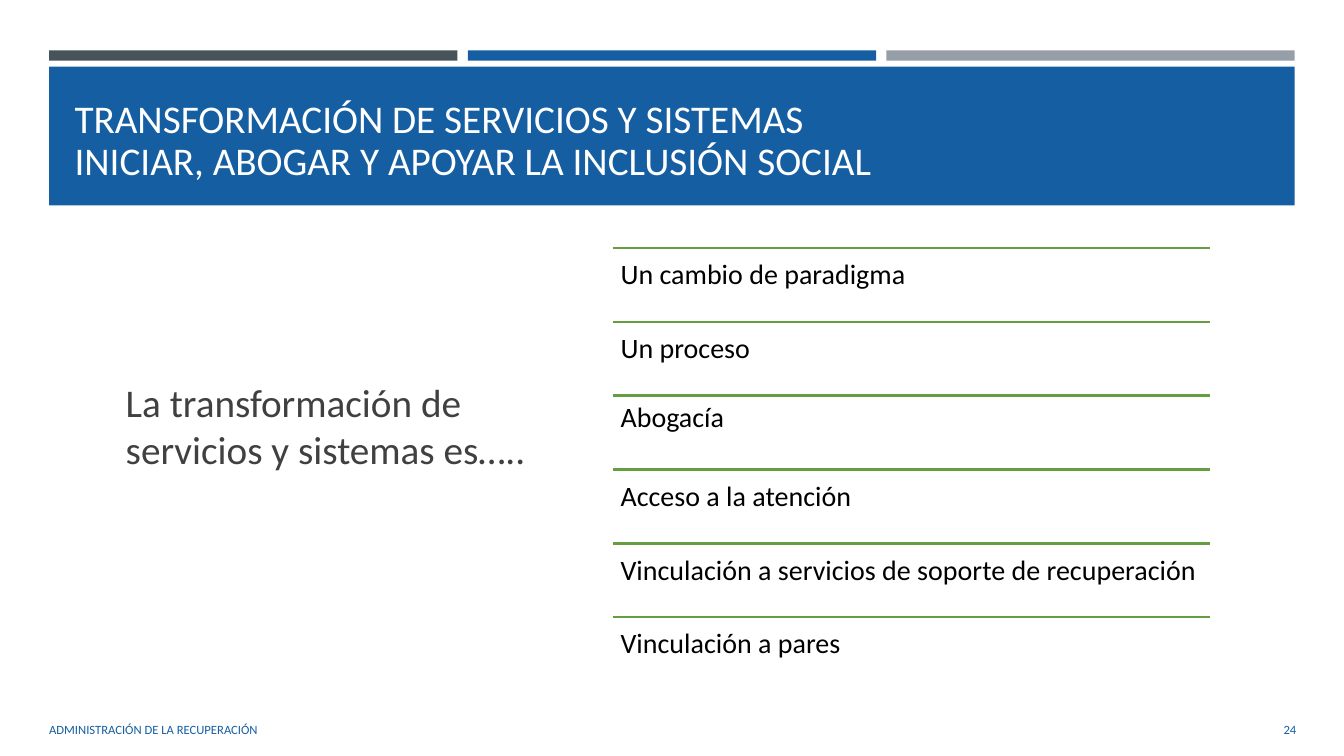
from lxml import etree
from pptx import Presentation
from pptx.dml.color import RGBColor
from pptx.enum.shapes import MSO_CONNECTOR, MSO_SHAPE
from pptx.enum.text import MSO_ANCHOR, PP_ALIGN
from pptx.oxml.ns import qn
from pptx.util import Cm, Pt

RECTANGLE = MSO_SHAPE.RECTANGLE
STRAIGHT = MSO_CONNECTOR.STRAIGHT
TOP, MIDDLE = MSO_ANCHOR.TOP, MSO_ANCHOR.MIDDLE
LEFT, RIGHT = PP_ALIGN.LEFT, PP_ALIGN.RIGHT

FONT = "Calibri"
COLORS = {
    "slate": "465359",
    "blue": "155EA1",
    "gray": "969FA7",
    "green": "649E40",
    "white": "FFFFFF",
    "body": "404040",
    "black": "000000",
}
TITLE = [
    "TRANSFORMACIÓN DE SERVICIOS Y SISTEMAS",
    "INICIAR, ABOGAR Y APOYAR LA INCLUSIÓN SOCIAL",
]
ITEMS = [
    ("Un cambio de paradigma", 0.32),
    ("Un proceso", 0.32),
    ("Abogacía", 0.2),
    ("Acceso a la atención", 0.32),
    ("Vinculación a servicios de soporte de recuperación", 0.32),
    ("Vinculación a pares", 0.32),
]


def color(name):
    return RGBColor.from_string(COLORS[name])


def add_bar(slide, left, top, width, height, fill):
    shape = slide.shapes.add_shape(RECTANGLE, Cm(left), Cm(top), Cm(width), Cm(height))
    shape.shadow.inherit = False
    shape.fill.solid()
    shape.fill.fore_color.rgb = color(fill)
    shape.line.fill.background()


def add_text(slide, box, lines, size, font_color, align=LEFT, anchor=TOP,
             spacing=1.0, side_inset=0.25, top_inset=0):
    shape = slide.shapes.add_textbox(*(Cm(length) for length in box))
    frame = shape.text_frame
    frame.word_wrap = True
    frame.vertical_anchor = anchor
    frame.margin_left = frame.margin_right = Cm(side_inset)
    frame.margin_top, frame.margin_bottom = Cm(top_inset), Cm(0)
    frame.text = "\n".join(lines)
    for paragraph in frame.paragraphs:
        paragraph.alignment = align
        paragraph.line_spacing = spacing
        paragraph.font.name = FONT
        paragraph.font.size = Pt(size)
        paragraph.font.color.rgb = color(font_color)


def add_rule(slide, left, top, width):
    connector = slide.shapes.add_connector(
        STRAIGHT, Cm(left), Cm(top), Cm(left + width), Cm(top))
    connector.line.color.rgb = color("green")
    connector.line.width = Pt(1.75)
    etree.SubElement(connector._element.spPr, qn("a:effectLst"))


def add_header(slide):
    for index, fill in enumerate(("slate", "blue", "gray")):
        add_bar(slide, 1.24 + index * 10.55, 1.27, 10.29, 0.26, fill)
    add_bar(slide, 1.24, 1.68, 31.39, 3.5, "blue")
    add_text(slide, (1.63, 2.51, 30.63, 2.2), TITLE, 28, "white", spacing=0.9)


def add_items(slide, left=15.44, top=6.25, width=15.06, pitch=1.86):
    for index, (text, top_inset) in enumerate(ITEMS):
        row_top = top + index * pitch
        add_rule(slide, left, row_top, width)
        add_text(slide, (left, row_top, width, pitch), [text], 20, "black",
                 spacing=0.9, side_inset=0.2, top_inset=top_inset)


def add_footer(slide):
    add_text(slide, (0.99, 17.86, 18.95, 1.02), ["ADMINISTRACIÓN DE LA RECUPERACIÓN"],
             9, "blue", anchor=MIDDLE)
    add_text(slide, (30, 17.86, 2.92, 1.02), ["24"], 9, "blue", RIGHT, MIDDLE)


def main():
    presentation = Presentation()
    presentation.slide_width, presentation.slide_height = Cm(33.87), Cm(19.05)
    slide = presentation.slides.add_slide(presentation.slide_layouts[6])
    add_header(slide)
    add_text(slide, (2.92, 9.54, 10.95, 2.6),
             ["La transformación de servicios y sistemas es….."], 28, "body")
    add_items(slide)
    add_footer(slide)
    presentation.save("out.pptx")


if __name__ == "__main__":
    main()
